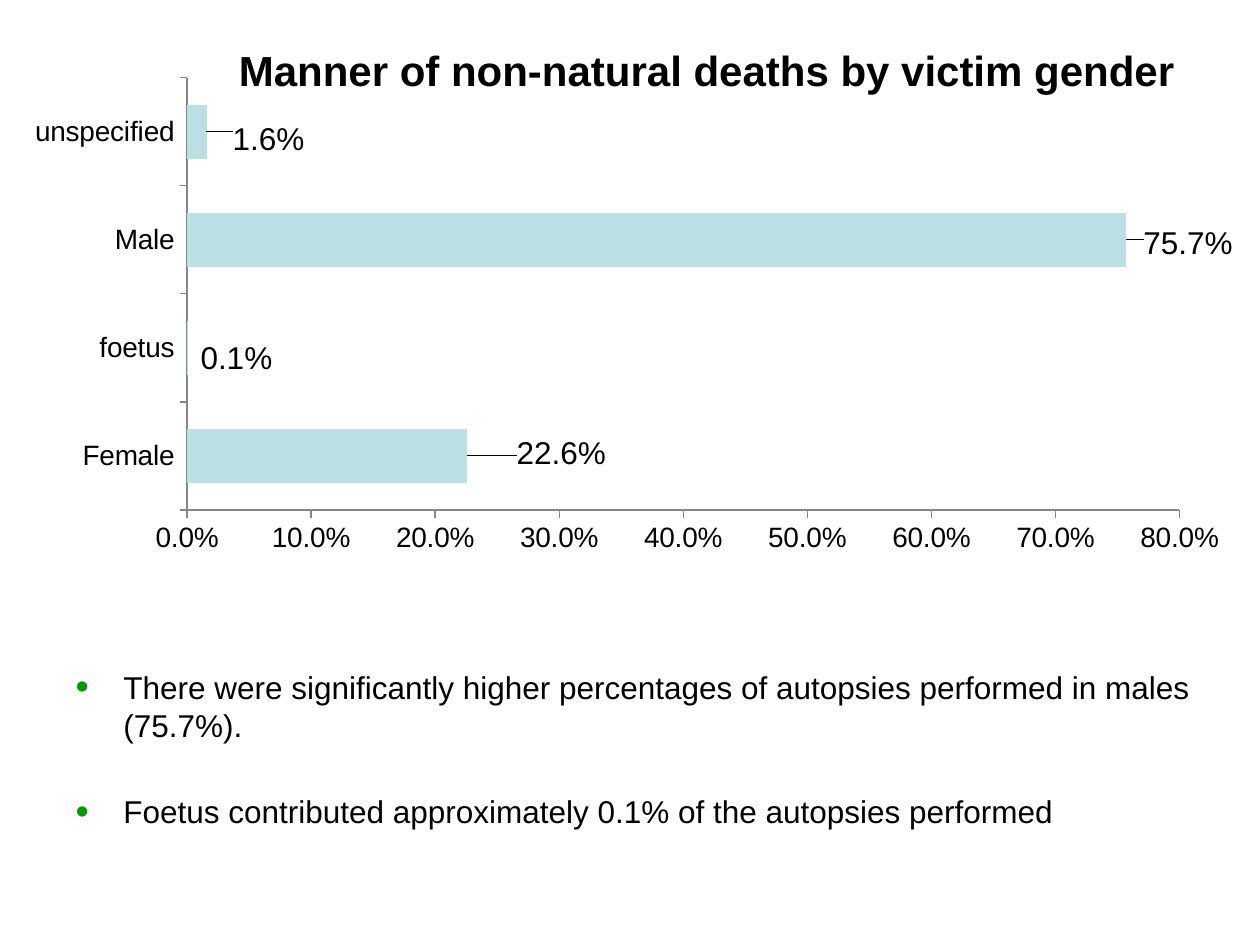
"""Build a slide with a bar chart of deaths by victim gender and two remarks."""
from lxml import etree
from pptx import Presentation
from pptx.chart.data import CategoryChartData
from pptx.dml.color import RGBColor
from pptx.enum.chart import XL_CHART_TYPE, XL_LABEL_POSITION, XL_TICK_MARK
from pptx.enum.text import MSO_AUTO_SIZE
from pptx.oxml.ns import qn
from pptx.util import Inches, Pt

BAR = XL_CHART_TYPE.BAR_CLUSTERED
OUTSIDE_END = XL_LABEL_POSITION.OUTSIDE_END
TICK_OUTSIDE = XL_TICK_MARK.OUTSIDE
NO_AUTOFIT = MSO_AUTO_SIZE.NONE

BLACK = RGBColor(0, 0, 0)
TEAL = RGBColor(0xBB, 0xE0, 0xE3)
GRAY = RGBColor(0x86, 0x86, 0x86)
GREEN = RGBColor(0, 0x99, 0)
FONT = "Arial"
PERCENT = "0.0%"

TITLE = "Manner of non-natural deaths by victim gender"
CHART_SIZE = (9.75, 5.14)
# category, share, label shift in inches
GENDERS = [
    ("Female", 0.226, (0.35, -0.02)),
    ("foetus", 0.001, (0.06, 0.08)),
    ("Male", 0.757, (0.1, 0.03)),
    ("unspecified", 0.016, (0.17, 0.06)),
]
REMARKS = [
    ("There were significantly higher percentages of autopsies performed in males (75.7%).", 4),
    ("Foetus contributed approximately 0.1% of the autopsies performed", 28),
]


def format_font(font, size, bold=False):
    font.name, font.size, font.bold = FONT, Pt(size), bold
    font.color.rgb = BLACK


def add_text(p, text, size=18, bold=False):
    r = p.add_run()
    r.text = text
    format_font(r.font, size, bold)


def make_layout(**values):
    layout = etree.Element(qn("c:layout"))
    manual = etree.SubElement(layout, qn("c:manualLayout"))
    for tag, value in values.items():
        etree.SubElement(manual, qn(f"c:{tag}")).set("val", str(value))
    return layout


def place(parent, layout, after=None):
    for old in parent.findall(qn("c:layout")):
        parent.remove(old)
    if after is None:
        parent.insert(0, layout)
    else:
        parent.find(qn(after)).addnext(layout)


def add_gender_chart(s):
    width, height = CHART_SIZE
    data = CategoryChartData(number_format=PERCENT)
    data.categories = [name for name, _, _ in GENDERS]
    data.add_series("Series 1", [share for _, share, _ in GENDERS])
    chart = s.shapes.add_chart(BAR, Inches(0.08), Inches(0.03), Inches(width), Inches(height), data).chart
    format_font(chart.font, 10)
    chart.has_legend = False
    chart.has_title = True
    title = chart.chart_title
    add_text(title.text_frame.paragraphs[0], TITLE, 24, True)
    place(title._element, make_layout(xMode="edge", yMode="edge", x=0.18, y=0.05), "c:tx")
    title.include_in_layout = False

    for axis in (chart.category_axis, chart.value_axis):
        axis.has_major_gridlines = False
        axis.major_tick_mark = TICK_OUTSIDE
        axis.format.line.color.rgb = GRAY
        axis.format.line.width = Pt(0.75)
        format_font(axis.tick_labels.font, 16)
    value_axis = chart.value_axis
    value_axis.minimum_scale, value_axis.maximum_scale, value_axis.major_unit = 0, 0.8, 0.1
    value_axis.tick_labels.number_format = PERCENT
    value_axis.tick_labels.number_format_is_linked = False

    plot = chart.plots[0]
    plot.gap_width = 100
    plot.vary_by_categories = False
    plot_area = plot._element.getparent()
    place(plot_area, make_layout(layoutTarget="inner", xMode="edge", yMode="edge",
                                 x=0.144, y=0.114, w=0.808, h=0.668))
    series = plot.series[0]
    series.format.fill.solid()
    series.format.fill.fore_color.rgb = TEAL
    labels = series.data_labels
    labels.show_value = True
    labels.number_format = PERCENT
    labels.number_format_is_linked = False
    format_font(labels.font, 18)
    for i, (_, _, (dx, dy)) in enumerate(GENDERS):
        label = series.points[i].data_label
        format_font(label.font, 18)
        label.position = OUTSIDE_END
        dlbl = labels._element.findall(qn("c:dLbl"))[i]
        place(dlbl, make_layout(x=round(dx / width, 3), y=round(dy / height, 3)), "c:idx")


def add_remarks(body):
    body.left, body.top, body.width, body.height = map(Inches, (0.5, 5.25, 9.17, 1.87))
    tf = body.text_frame
    tf.word_wrap = True
    tf.auto_size = NO_AUTOFIT
    for i, (text, gap) in enumerate(REMARKS):
        p = tf.add_paragraph() if i else tf.paragraphs[0]
        p.space_before = Pt(gap)
        ppr = p._p.get_or_add_pPr()
        ppr.set("marL", str(Inches(0.38)))
        ppr.set("indent", str(-Inches(0.38)))
        color = etree.SubElement(ppr, qn("a:buClr"))
        etree.SubElement(color, qn("a:srgbClr")).set("val", str(GREEN))
        etree.SubElement(ppr, qn("a:buSzPct")).set("val", "120000")
        etree.SubElement(ppr, qn("a:buChar")).set("char", "•")
        add_text(p, text)


def main():
    prs = Presentation()
    prs.slide_width, prs.slide_height = Inches(10), Inches(7.5)
    s = prs.slides.add_slide(prs.slide_layouts[1])
    empty_title = s.shapes.title._element
    empty_title.getparent().remove(empty_title)
    add_gender_chart(s)
    add_remarks(s.placeholders[1])
    prs.save("out.pptx")


if __name__ == "__main__":
    main()
